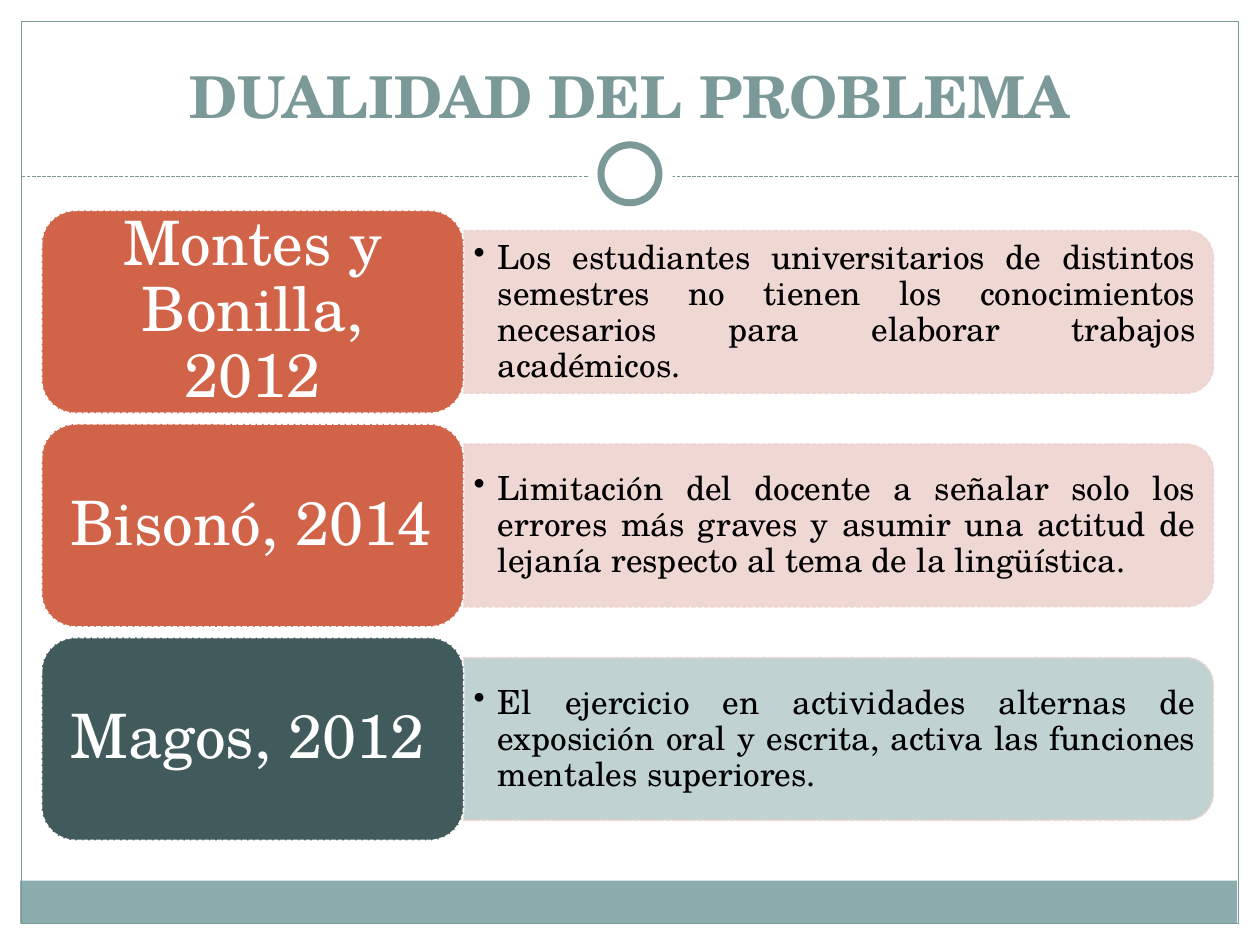
from lxml.etree import SubElement
from pptx import Presentation
from pptx.dml.color import RGBColor
from pptx.enum.dml import MSO_LINE
from pptx.enum.shapes import MSO_CONNECTOR, MSO_SHAPE
from pptx.enum.text import MSO_ANCHOR, PP_ALIGN
from pptx.oxml.ns import qn
from pptx.util import Inches, Pt

FONT = "TeX Gyre Schola"
TEAL, WHITE, PINK = "7C999A", "FFFFFF", "EED3D0"
ORANGE, DARK, PALE = "D16349", "415B5C", "BACECE"

# Author, alignment, label fill, panel fill, statement
ROWS = [
    ("Montes y Bonilla, 2012", PP_ALIGN.CENTER, ORANGE, PINK,
     "Los estudiantes universitarios de distintos semestres no tienen los "
     "conocimientos necesarios para elaborar trabajos académicos."),
    ("Bisonó, 2014", PP_ALIGN.JUSTIFY, ORANGE, PINK,
     "Limitación del docente a señalar solo los errores más graves y asumir "
     "una actitud de lejanía respecto al tema de la lingüística."),
    ("Magos, 2012", PP_ALIGN.JUSTIFY, DARK, PALE,
     "El ejercicio en actividades alternas de exposición oral y escrita, "
     "activa las funciones mentales superiores."),
]
TOP, STEP = 1.67, 1.695


def paint(part, color, alpha=None):
    """Set a solid colour on a fill, line fill or font fill."""
    part.solid()
    part.fore_color.rgb = RGBColor.from_string(color)
    if alpha:
        for node in part._xPr.iter(qn("a:srgbClr")):
            if node.getparent().getparent() is part._xPr:
                SubElement(node, qn("a:alpha")).set("val", str(alpha * 1000))


def stroke(line, color, width, dash=False, alpha=None):
    paint(line.fill, color, alpha)
    line.width = Pt(width)
    if dash:
        line.dash_style = MSO_LINE.SQUARE_DOT


def add_box(slide, kind, at, fill=None, edge=None):
    shape = slide.shapes.add_shape(kind, *map(Inches, at))
    shape.shadow.inherit = False
    if fill:
        paint(shape.fill, *fill)
    else:
        shape.fill.background()
    if edge:
        stroke(shape.line, *edge)
    else:
        shape.line.fill.background()
    return shape


def add_rule(slide, start, end):
    rule = slide.shapes.add_connector(
        MSO_CONNECTOR.STRAIGHT, *map(Inches, start + end))
    stroke(rule.line, TEAL, 0.75, True)
    SubElement(rule._element.spPr, qn("a:effectLst"))


def add_text(slide, at, text, size, color, align, pad=(0.1, 0.05),
             anchor=MSO_ANCHOR.MIDDLE, bold=False, space=0.9):
    frame = slide.shapes.add_textbox(*map(Inches, at)).text_frame
    frame.word_wrap = True
    frame.vertical_anchor = anchor
    frame.margin_left = frame.margin_right = Inches(pad[0])
    frame.margin_top = frame.margin_bottom = Inches(pad[1])
    para = frame.paragraphs[0]
    para.alignment = align
    para.line_spacing = space
    run = para.add_run()
    run.text = text
    run.font.name = FONT
    run.font.size = Pt(size)
    run.font.bold = bold
    paint(run.font.fill, color)
    return para


def add_bullet(para):
    props = para._p.get_or_add_pPr()
    props.set("marL", str(Inches(0.19)))
    props.set("indent", str(-Inches(0.19)))
    SubElement(props, qn("a:buChar")).set("char", "•")


def add_frame(slide):
    # Bottom band, border, dashed rule and ring
    add_box(slide, MSO_SHAPE.RECTANGLE, (0.16, 6.99, 9.66, 0.34), ("8CADAE",))
    add_box(slide, MSO_SHAPE.RECTANGLE, (0.17, 0.17, 9.66, 7.16),
            edge=(TEAL, 0.75))
    add_rule(slide, (0.17, 1.4), (9.83, 1.4))
    add_box(slide, MSO_SHAPE.OVAL, (4.67, 1.05, 0.67, 0.67), (WHITE,))
    add_box(slide, MSO_SHAPE.OVAL, (4.77, 1.15, 0.46, 0.46), (WHITE,),
            (TEAL, 4))


def add_row(slide, top, name, align, dark, light, note):
    # Statement panel: upright shape turned so its round end faces right
    panel = add_box(slide, MSO_SHAPE.ROUND_2_SAME_RECTANGLE,
                    (6.01, top - 2.17, 1.29, 5.95), (light, 90),
                    (PINK, 0.9, True, 90))
    panel.rotation = 90
    add_bullet(add_text(slide, (3.68, top + 0.23, 5.89, 1.16), note, 19,
                        "000000", PP_ALIGN.JUSTIFY, (0.08, 0.04)))
    # Author label
    add_box(slide, MSO_SHAPE.ROUNDED_RECTANGLE, (0.33, top, 3.35, 1.61),
            (dark,), (WHITE, 0.9, True))
    add_text(slide, (0.41, top + 0.08, 3.19, 1.45), name, 35, WHITE, align,
             (0.15, 0.07))


def main():
    deck = Presentation()
    deck.slide_width, deck.slide_height = Inches(10), Inches(7.5)
    slide = deck.slides.add_slide(deck.slide_layouts[6])
    add_frame(slide)
    add_text(slide, (0.33, 0.25, 9.33, 0.83), "DUALIDAD DEL PROBLEMA", 33,
             TEAL, PP_ALIGN.CENTER, anchor=MSO_ANCHOR.BOTTOM, bold=True,
             space=1.0)
    for i, row in enumerate(ROWS):
        add_row(slide, TOP + i * STEP, *row)
    deck.save("out.pptx")


if __name__ == "__main__":
    main()
